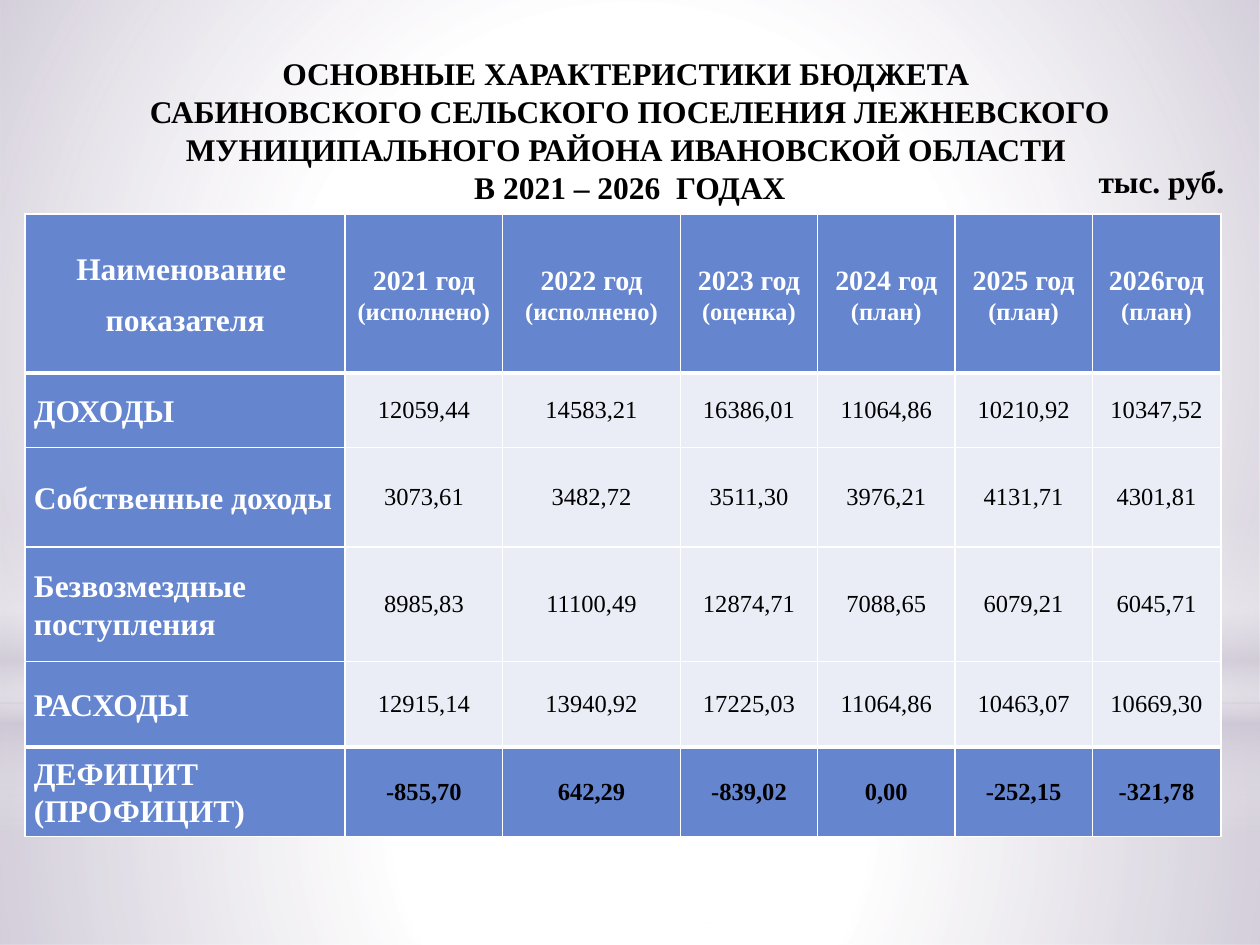
import pptx
import pptx.util
import pptx.dml.color
import pptx.enum.shapes
import pptx.enum.text
import pptx.oxml
import pptx.oxml.ns

Inches = pptx.util.Inches
Pt = pptx.util.Pt
ALIGN = pptx.enum.text.PP_ALIGN
ANCHOR = pptx.enum.text.MSO_ANCHOR
SHAPE = pptx.enum.shapes.MSO_SHAPE
NS = pptx.oxml.ns.nsdecls("a")
FONT = "Times New Roman"
COLORS = {"white": "FFFFFF", "lilac": "C9C2D1", "black": "000000",
          "blue": "6585CF", "pale": "EAEDF6"}


def add_text(paragraph, text, size, color, bold=True):
    run = paragraph.add_run()
    run.text = text
    for name, value in {"name": FONT, "size": Pt(size), "bold": bold}.items():
        setattr(run.font, name, value)
    run.font.color.rgb = pptx.dml.color.RGBColor.from_string(COLORS[color])


def gradient_fill(stops, radial):
    """Return a gradFill element; each stop is (position %, color, opacity %)."""
    stop_xml = "".join(
        f'<a:gs pos="{position * 1000}"><a:srgbClr val="{COLORS[color]}">'
        f'<a:alpha val="{opacity * 1000}"/></a:srgbClr></a:gs>'
        for position, color, opacity in stops)
    direction = ('<a:path path="circle"><a:fillToRect l="50000" t="50000" r="50000" b="50000"/></a:path>'
                 if radial else '<a:lin ang="5400000" scaled="0"/>')
    return pptx.oxml.parse_xml(
        f'<a:gradFill {NS} rotWithShape="1"><a:gsLst>{stop_xml}</a:gsLst>{direction}</a:gradFill>')


presentation = pptx.Presentation()
presentation.slide_width = Inches(10)
presentation.slide_height = Inches(7.5)
slide = presentation.slides.add_slide(presentation.slide_layouts[5])

# Background glow
glows = [
    (SHAPE.RECTANGLE, 5.58, 1.92, True,
     [(0, "white", 91), (37, "white", 76), (100, "lilac", 79)]),
    (SHAPE.RECTANGLE, 0, 5.58, True,
     [(0, "white", 89), (48, "white", 62), (100, "lilac", 79)]),
    (SHAPE.RECTANGLE, 4.12, 2.5, False,
     [(0, "white", 0), (29, "white", 30), (45, "lilac", 40),
      (55, "white", 26), (65, "lilac", 60), (100, "white", 0)]),
    (SHAPE.OVAL, 1.75, 5.58, True, [(0, "white", 100), (56, "white", 0)]),
]
for outline, top, height, radial, stops in glows:
    glow = slide.shapes.add_shape(outline, 0, Inches(top), Inches(10), Inches(height))
    glow.shadow.inherit = False
    glow.line.fill.background()
    glow.fill.background()
    no_fill = glow._element.spPr.find(pptx.oxml.ns.qn("a:noFill"))
    no_fill.getparent().replace(no_fill, gradient_fill(stops, radial))

# Title, brought in front of the background
title = slide.shapes.title
slide.shapes._spTree.append(title._element)
title.left, title.top, title.width, title.height = 0, Inches(0.38), Inches(10), Inches(1.62)
heading = title.text_frame
heading.auto_size = pptx.enum.text.MSO_AUTO_SIZE.NONE
heading.vertical_anchor = ANCHOR.TOP
title_lines = [
    "ОСНОВНЫЕ ХАРАКТЕРИСТИКИ БЮДЖЕТА ",
    "САБИНОВСКОГО СЕЛЬСКОГО ПОСЕЛЕНИЯ ЛЕЖНЕВСКОГО МУНИЦИПАЛЬНОГО РАЙОНА ИВАНОВСКОЙ ОБЛАСТИ ",
    "В 2021 – 2026  ГОДАХ",
]
for index, line in enumerate(title_lines):
    paragraph = heading.add_paragraph() if index else heading.paragraphs[0]
    paragraph.alignment = ALIGN.CENTER
    add_text(paragraph, line, 18, "black")

units = slide.shapes.add_textbox(Inches(8.62), Inches(1.24), Inches(1.21), Inches(0.4))
units.text_frame.word_wrap = False
add_text(units.text_frame.paragraphs[0], "тыс. руб.", 18, "black")

# Budget table
years = [("2021 год ", "(исполнено)"), ("2022 год ", "(исполнено)"), ("2023 год ", "(оценка)"),
         ("2024 год ", "(план)"), ("2025 год ", "(план)"), ("2026год ", "(план)")]
budget = [
    ("ДОХОДЫ", "12059,44", "14583,21", "16386,01", "11064,86", "10210,92", "10347,52"),
    ("Собственные доходы", "3073,61", "3482,72", "3511,30", "3976,21", "4131,71", "4301,81"),
    ("Безвозмездные поступления", "8985,83", "11100,49", "12874,71", "7088,65", "6079,21", "6045,71"),
    ("РАСХОДЫ", "12915,14", "13940,92", "17225,03", "11064,86", "10463,07", "10669,30"),
    ("ДЕФИЦИТ (ПРОФИЦИТ)", "-855,70", "642,29", "-839,02", "0,00", "-252,15", "-321,78"),
]
rows = [("Наименование ", *years)] + budget
column_widths = [2.54, 1.25, 1.41, 1.09, 1.09, 1.09, 1.02]
row_heights = [1.26, 0.59, 0.79, 0.91, 0.68, 0.71]
last = len(rows) - 1

table = slide.shapes.add_table(len(rows), len(column_widths), Inches(0.2), Inches(1.7),
                               Inches(sum(column_widths)), Inches(sum(row_heights))).table
table.first_row = table.horz_banding = False
for column, width in zip(table.columns, column_widths):
    column.width = Inches(width)
for row, height in zip(table.rows, row_heights):
    row.height = Inches(height)

for r, row in enumerate(rows):
    borders = {"L": 1, "R": 1, "T": 3 if r in (1, last) else 1, "B": 3 if r in (0, last - 1) else 1}
    for c, content in enumerate(row):
        cell = table.cell(r, c)
        is_label = r == 0 or c == 0
        cell.vertical_anchor = ANCHOR.MIDDLE
        side = Inches(0.07 if is_label else 0)
        margins = {"left": side, "right": side, "top": Inches(0.01 if is_label else 0), "bottom": 0}
        for edge, margin in margins.items():
            setattr(cell, f"margin_{edge}", margin)

        cell_properties = cell._tc.get_or_add_tcPr()
        for edge, width in borders.items():
            cell_properties.append(pptx.oxml.parse_xml(
                f'<a:ln{edge} {NS} w="{Pt(width)}"><a:solidFill>'
                f'<a:srgbClr val="{COLORS["white"]}"/></a:solidFill></a:ln{edge}>'))
        cell.fill.solid()
        cell.fill.fore_color.rgb = pptx.dml.color.RGBColor.from_string(
            COLORS["blue" if is_label or r == last else "pale"])

        paragraph = cell.text_frame.paragraphs[0]
        if r == 0 and c > 0:
            year, status = content
            add_text(paragraph, year, 16, "white")
            add_text(paragraph, status, 14, "white")
        elif is_label:
            add_text(paragraph, content, 18, "white")
            if r == 0:
                add_text(cell.text_frame.add_paragraph(), "показателя", 18, "white")
        else:
            add_text(paragraph, content, 14, "black", bold=r == last)
        for paragraph in cell.text_frame.paragraphs:
            paragraph.alignment = ALIGN.LEFT if c == 0 and r > 0 else ALIGN.CENTER
            if is_label:
                paragraph.line_spacing = 1.07
                paragraph.space_after = Pt(8)

presentation.save("out.pptx")
